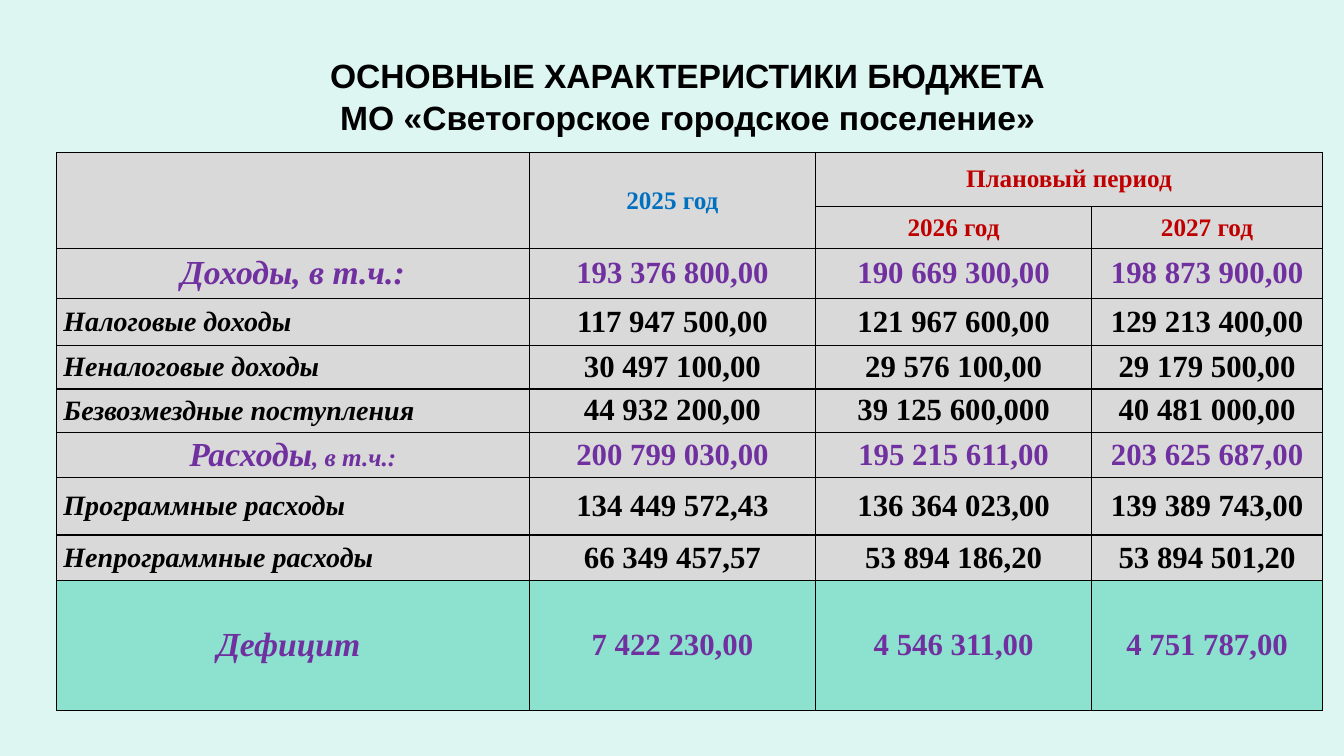
from lxml.etree import SubElement
from pptx import Presentation
from pptx.dml.color import RGBColor as Color
from pptx.enum.text import MSO_ANCHOR as Anchor, PP_ALIGN as Align
from pptx.oxml.ns import qn
from pptx.util import Inches, Pt

COLORS = {
    "page": "DEF6F1",
    "cell": "D9D9D9",
    "deficit": "8CE1CF",
    "black": "000000",
    "blue": "0070C0",
    "red": "C00000",
    "purple": "7030A0",
}

TITLE_LINES = ["ОСНОВНЫЕ ХАРАКТЕРИСТИКИ БЮДЖЕТА", "МО «Светогорское городское поселение»"]
COLUMN_SHARES = [35.18, 21.3, 20.55, 17.17]
ROW_SHARES = [7.2, 5.6, 6.53, 6.27, 5.73, 5.73, 6, 7.6, 6, 17.2]
HEADINGS = [
    (0, 1, "2025 год", "blue"),
    (0, 2, "Плановый период", "red"),
    (1, 2, "2026 год", "red"),
    (1, 3, "2027 год", "red"),
]
MERGES = [((0, 0), (1, 0)), ((0, 1), (1, 1)), ((0, 2), (0, 3))]
TOTAL, ITEM = ("purple", 24, Align.CENTER), ("black", 20, Align.LEFT)
BUDGET = [
    (TOTAL, ["Доходы, в т.ч.:"], "193 376 800,00", "190 669 300,00", "198 873 900,00"),
    (ITEM, ["Налоговые доходы"], "117 947 500,00", "121 967 600,00", "129 213 400,00"),
    (ITEM, ["Неналоговые доходы"], "30 497 100,00", "29 576 100,00", "29 179 500,00"),
    (ITEM, ["Безвозмездные поступления"], "44 932 200,00", "39 125 600,000", "40 481 000,00"),
    (TOTAL, ["Расходы", ", в т.ч.:"], "200 799 030,00", "195 215 611,00", "203 625 687,00"),
    (ITEM, ["Программные расходы"], "134 449 572,43", "136 364 023,00", "139 389 743,00"),
    (ITEM, ["Непрограммные расходы"], "66 349 457,57", "53 894 186,20", "53 894 501,20"),
    (TOTAL, ["Дефицит "], "7 422 230,00", "4 546 311,00", "4 751 787,00"),
]


class BudgetSlide:
    title_font = "Arial"
    table_font = "Times New Roman"
    heading_size = 18
    value_size = 22

    def __init__(self, deck):
        self.deck = deck
        self.page = deck.slides.add_slide(deck.slide_layouts[5])
        background = self.page.background.fill
        background.solid()
        background.fore_color.rgb = self.color("page")

    def color(self, name):
        return Color.from_string(COLORS[name])

    def across(self, share):
        return round(self.deck.slide_width * share / 100)

    def down(self, share):
        return round(self.deck.slide_height * share / 100)

    def frame(self, left, top, width, height):
        return self.across(left), self.down(top), self.across(width), self.down(height)

    def span(self, para, text, font, size, color, italic=False):
        span = para.add_run()
        span.text = text
        span.font.name = font
        span.font.size = Pt(size)
        span.font.bold = True
        span.font.italic = italic
        span.font.color.rgb = self.color(color)

    def title(self, lines, *place):
        box = self.page.shapes.title
        box.left, box.top, box.width, box.height = self.frame(*place)
        box.text_frame.vertical_anchor = Anchor.MIDDLE
        para = box.text_frame.paragraphs[0]
        para.alignment = Align.CENTER
        para.line_spacing = 1.06
        for number, line in enumerate(lines):
            if number:
                para.add_line_break()
            self.span(para, line, self.title_font, 24, "black")

    def table(self, left, top, columns, rows):
        place = self.frame(left, top, sum(columns), sum(rows))
        table = self.page.shapes.add_table(len(rows), len(columns), *place).table
        table.first_row = table.horz_banding = False
        for column, share in zip(table.columns, columns):
            column.width = self.across(share)
        for row, share in zip(table.rows, rows):
            row.height = self.down(share)
        for cell in table.iter_cells():
            self.dress(cell)
        return table

    def dress(self, cell):
        cell.margin_left = cell.margin_right = Inches(0.07)
        cell.margin_top = cell.margin_bottom = 0
        cell.vertical_anchor = Anchor.MIDDLE
        properties = cell._tc.get_or_add_tcPr()
        for side in ("lnL", "lnR", "lnT", "lnB"):
            line = SubElement(properties, qn(f"a:{side}"), w=str(Pt(1)))
            fill = SubElement(line, qn("a:solidFill"))
            SubElement(fill, qn("a:srgbClr"), val=COLORS["black"])
        self.paint(cell, "cell")

    def paint(self, cell, color):
        cell.fill.solid()
        cell.fill.fore_color.rgb = self.color(color)

    def label(self, cell, parts, color, italic=False, align=Align.CENTER):
        para = cell.text_frame.paragraphs[0]
        para.alignment = align
        for text, size in parts:
            self.span(para, text, self.table_font, size, color, italic)


def main():
    deck = Presentation()
    deck.slide_width, deck.slide_height = Inches(13.33), Inches(7.5)
    slide = BudgetSlide(deck)
    slide.title(TITLE_LINES, 8.1, 4.93, 86.1, 15.2)
    table = slide.table(4.2, 20.13, COLUMN_SHARES, ROW_SHARES)
    for first, last in MERGES:
        table.cell(*first).merge(table.cell(*last))
    for row, column, text, color in HEADINGS:
        slide.label(table.cell(row, column), [(text, slide.heading_size)], color)
    for row, ((color, size, align), name, *values) in enumerate(BUDGET, 2):
        parts = list(zip(name, (size, slide.heading_size)))
        slide.label(table.cell(row, 0), parts, color, True, align)
        for column, value in enumerate(values, 1):
            slide.label(table.cell(row, column), [(value, slide.value_size)], color)
    for cell in table.rows[len(ROW_SHARES) - 1].cells:
        slide.paint(cell, "deficit")
    deck.save("out.pptx")


if __name__ == "__main__":
    main()
